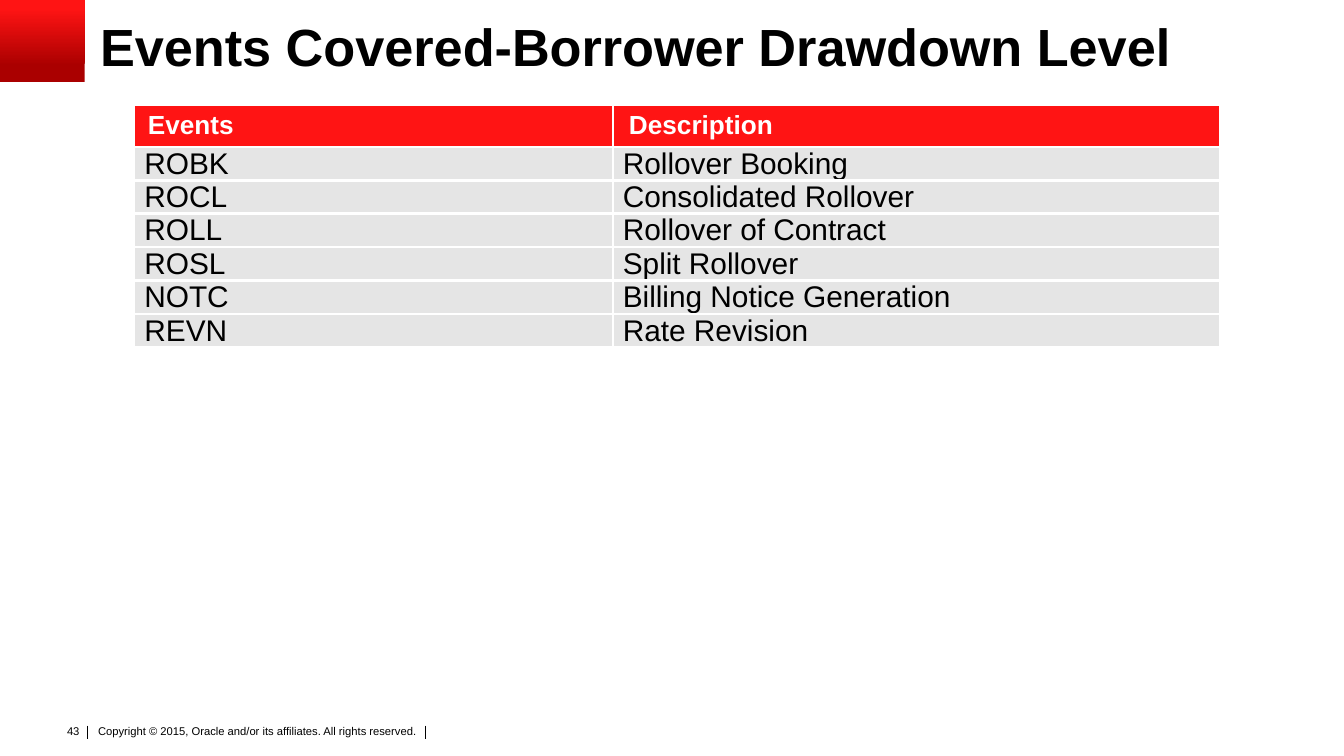
from typing import NamedTuple

from lxml.etree import SubElement as Sub
from pptx import Presentation
from pptx.dml.color import RGBColor
from pptx.enum.shapes import MSO_CONNECTOR as Link, MSO_SHAPE as Shape
from pptx.enum.text import MSO_ANCHOR as Anchor, MSO_AUTO_SIZE as Auto, PP_ALIGN as Align
from pptx.oxml.ns import qn
from pptx.util import Inches, Pt

BLACK = RGBColor(0x00, 0x00, 0x00)
WHITE = RGBColor(0xFF, 0xFF, 0xFF)
RED = RGBColor(0xFF, 0x14, 0x14)
DARK = RGBColor(0xAA, 0x00, 0x00)
GREY = RGBColor(0xE5, 0xE5, 0xE5)

COLS, ROWS = 100, 56.25
UNIT = Inches(0.1)


class Box(NamedTuple):
    """Left, top, width and height in grid columns and rows."""
    x: float
    y: float
    w: float
    h: float


class Label(NamedTuple):
    text: str
    box: Box
    font: dict
    frame: dict
    para: dict


class Style(NamedTuple):
    fill: RGBColor
    color: RGBColor
    font: dict
    cell: dict
    para: dict


def grid(n: float) -> int:
    return round(n * UNIT)


def pads(x: float, y: float) -> dict:
    return {"margin_left": grid(x), "margin_right": grid(x),
            "margin_top": grid(y), "margin_bottom": grid(y)}


def face(size: float, bold: bool = False) -> dict:
    return {"name": "Arial", "size": Pt(size), "bold": bold}


def apply(item, values: dict) -> None:
    for name, value in values.items():
        setattr(item, name, value)


def write(para, text: str, font: dict, color: RGBColor, layout: dict) -> None:
    apply(para, layout)
    run = para.add_run()
    run.text = text
    apply(run.font, font)
    run.font.color.rgb = color


def add_label(slide, label: Label) -> None:
    frame = slide.shapes.add_textbox(*map(grid, label.box)).text_frame
    apply(frame, label.frame)
    write(frame.paragraphs[0], label.text, label.font, BLACK, label.para)


def add_rule(slide, x: float, top: float, end: float) -> None:
    rule = slide.shapes.add_connector(Link.STRAIGHT, *map(grid, (x, top, x, end)))
    rule.line.color.rgb = BLACK
    rule.line.width = Pt(0.5)
    Sub(rule._element.spPr, qn("a:effectLst"))


def add_block(slide, box: Box) -> None:
    block = slide.shapes.add_shape(Shape.RECTANGLE, *map(grid, box))
    block.shadow.inherit = False
    block.line.fill.background()
    block.fill.gradient()
    block.fill.gradient_angle = 90
    for stop, (place, color) in zip(block.fill.gradient_stops, ((0.2, DARK), (0.9, RED))):
        stop.position = place
        stop.color.rgb = color


def add_edges(cell, sides: tuple) -> None:
    """Put white lines on the sides; call before the cell's fill is set."""
    props = cell._tc.get_or_add_tcPr()
    for side in sides:
        edge = Sub(props, qn(f"a:{side}"), w=str(Pt(1.5)))
        Sub(Sub(edge, qn("a:solidFill")), qn("a:srgbClr"), val=str(WHITE))


def add_events(slide, box: Box, widths: tuple, heights: list) -> None:
    table = slide.shapes.add_table(len(EVENTS), len(widths), *map(grid, box)).table
    for col, width in zip(table.columns, widths):
        col.width = grid(width)
    for r, (height, texts) in enumerate(zip(heights, EVENTS)):
        table.rows[r].height = grid(height)
        style = BODY if r else HEAD
        for c, text in enumerate(texts):
            cell = table.cell(r, c)
            add_edges(cell, ("lnL" if c else "lnR", "lnT", "lnB"))
            cell.fill.solid()
            cell.fill.fore_color.rgb = style.fill
            apply(cell, style.cell)
            write(cell.text_frame.paragraphs[0], text, style.font, style.color, style.para)
    table.cell(0, 1).margin_left = grid(1.2)


EVENTS = (
    ("Events", "Description"),
    ("ROBK", "Rollover Booking"),
    ("ROCL", "Consolidated Rollover"),
    ("ROLL", "Rollover of Contract"),
    ("ROSL", "Split Rollover"),
    ("NOTC", "Billing Notice Generation"),
    ("REVN", "Rate Revision"),
)
HEAD = Style(RED, WHITE, face(14, True),
             {"vertical_anchor": Anchor.MIDDLE, **pads(1, 0.4)}, {})
BODY = Style(GREY, BLACK, face(16),
             {"vertical_anchor": Anchor.BOTTOM, **pads(0.75, 0)}, {"line_spacing": 0.93})

LABELS = (
    Label("Copyright © 2015, Oracle and/or its affiliates. All rights reserved.",
          Box(6.9, 53.7, 27.4, 2.4), face(6), {"word_wrap": True, **pads(0.4, 0.2)}, {}),
    Label("43", Box(3.9, 53.4, 3, 2), face(6),
          {"word_wrap": False, "auto_size": Auto.SHAPE_TO_FIT_TEXT},
          {"alignment": Align.RIGHT}),
    Label("Events Covered-Borrower Drawdown Level", Box(7.45, 1.5, 90, 4.4), face(28, True),
          {"word_wrap": True, "vertical_anchor": Anchor.MIDDLE, **pads(0, 0)},
          {"line_spacing": 0.9}),
)


def main() -> None:
    deck = Presentation()
    deck.slide_width, deck.slide_height = grid(COLS), grid(ROWS)
    slide = deck.slides.add_slide(deck.slide_layouts[6])
    for x in (6.5, 31.65):
        add_rule(slide, x, 54, 55)
    add_block(slide, Box(0, 0, 6.3, 6.1))
    for label in LABELS:
        add_label(slide, label)
    heights = [3.1] + [2.4] * (len(EVENTS) - 1)
    add_events(slide, Box(10, 7.8, 80.8, sum(heights)), (35.6, 45.2), heights)
    deck.save("out.pptx")


if __name__ == "__main__":
    main()
